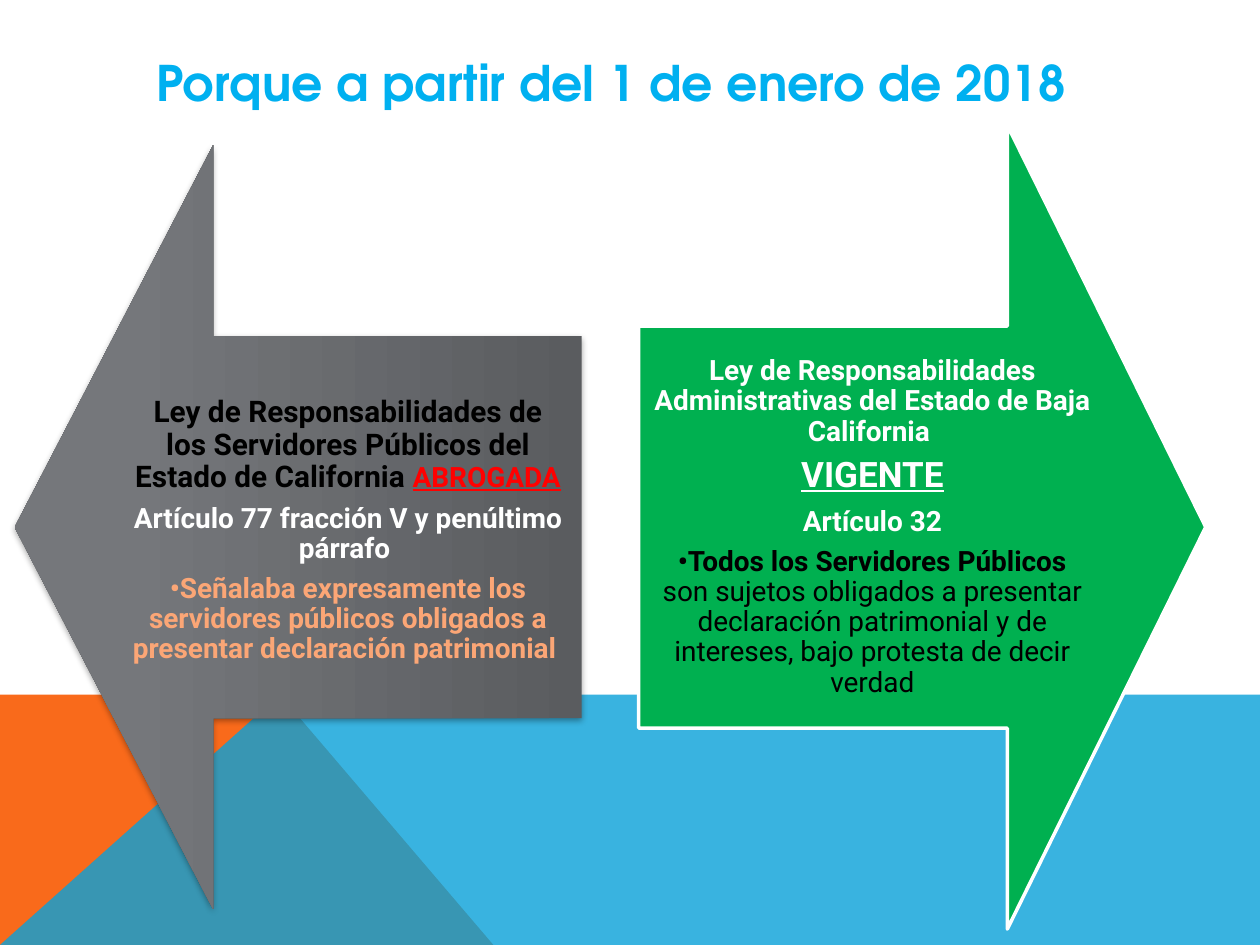
import pptx
import pptx.util
import pptx.dml.color
import pptx.enum.shapes
import pptx.enum.text
import pptx.oxml
import pptx.oxml.ns
import copy

Pt = pptx.util.Pt
qn = pptx.oxml.ns.qn
Align = pptx.enum.text.PP_ALIGN
Anchor = pptx.enum.text.MSO_ANCHOR
WIDE, HIGH = 720, 540


def rgb(code):
    return pptx.dml.color.RGBColor.from_string(code)


def apply(item, values):
    for name, value in values.items():
        setattr(item, name, value)


def add_band(slide, box, points, color, alpha=None):
    """Draw a borderless polygon; points are offsets within the box."""
    left, top = box
    spots = [(left + x, top + y) for x, y in points]
    form = slide.shapes.build_freeform(*spots[0], scale=Pt(1))
    form.add_line_segments(spots[1:], close=True)
    band = form.convert_to_shape()
    band.shadow.inherit = False
    band.line.fill.background()
    band.fill.solid()
    band.fill.fore_color.rgb = rgb(color)
    if alpha:
        tint = band.fill._xPr.find(qn("a:solidFill"))[0]
        tint.append(pptx.oxml.parse_xml(
            f'<a:alpha xmlns:a="{pptx.oxml.ns.nsuri("a")}" val="{alpha * 1000}"/>'))


def add_floor(slide, top):
    deep = HIGH - top
    fold = 160.5
    add_band(slide, (0, top), [(0, deep), (0, 0), (fold, 0), (281.5, deep)], "F96A1B")
    add_band(slide, (0, top), [(0, deep), (fold, 0), (WIDE, 0), (WIDE, deep)],
             "08A1D9", 80)


def add_arrow(slide, box, turn):
    """Fit an up arrow, turned a quarter, into the box it covers on the slide."""
    left, top, width, height = box
    shift = (width - height) / 2
    arrow = slide.shapes.add_shape(
        pptx.enum.shapes.MSO_SHAPE.UP_ARROW,
        Pt(left + shift), Pt(top - shift), Pt(height), Pt(width))
    arrow.rotation = turn
    arrow.adjustments[0] = 0.5
    arrow.adjustments[1] = 0.35
    arrow.shadow.inherit = False
    return arrow


def shade(arrow, stops):
    arrow.line.fill.background()
    arrow.fill.gradient()
    arrow.fill.gradient_angle = 90
    marks = arrow.fill._xPr.find(qn("a:gradFill")).find(qn("a:gsLst"))
    marks.append(copy.deepcopy(marks[-1]))
    for stop, (place, color) in zip(arrow.fill.gradient_stops, stops):
        stop.position = place
        stop.color.rgb = rgb(color)


def drop_shadow(shape):
    effects = shape.element.spPr.find(qn("a:effectLst"))
    effects.append(pptx.oxml.parse_xml(
        f'<a:outerShdw xmlns:a="{pptx.oxml.ns.nsuri("a")}" blurRad="{Pt(3.1)}" '
        f'dist="{Pt(1.8)}" dir="5400000" rotWithShape="0"><a:srgbClr val="000000">'
        '<a:alpha val="35000"/></a:srgbClr></a:outerShdw>'))


def add_text(slide, box, paras, frame, layout, gap=0):
    """Write paragraphs, each a list of (text, color, font values).

    The space after a paragraph is gap times the size of its first run.
    """
    area = slide.shapes.add_textbox(*map(Pt, box)).text_frame
    apply(area, {"word_wrap": True, **frame})
    for index, runs in enumerate(paras):
        para = area.add_paragraph() if index else area.paragraphs[0]
        apply(para, layout)
        for text, color, values in runs:
            run = para.add_run()
            run.text = text
            apply(run.font, {"name": "Roboto", "size": Pt(16), "bold": True, **values})
            run.font.color.rgb = rgb(color)
        para.space_after = Pt(gap * para.runs[0].font.size.pt)


def add_law(slide, box, paras, inset):
    sides = ("left", "top", "right", "bottom")
    frame = {f"margin_{side}": Pt(inset) for side in sides}
    frame["vertical_anchor"] = Anchor.MIDDLE
    layout = {"alignment": Align.CENTER, "line_spacing": 0.9}
    add_text(slide, box, paras, frame, layout, 0.35)


def add_old(slide, box):
    left, top, width, height = box
    arrow = add_arrow(slide, box, 270)
    shade(arrow, [(0, "5A5C5F"), (0.8, "75777B"), (1, "75787C")])
    drop_shadow(arrow)
    add_law(slide, (left + 57, top + 111.5, 267, 218), [
        [("Ley de Responsabilidades de los Servidores Públicos del Estado de California ",
          "000000", {"size": Pt(17)}),
         ("ABROGADA", "FF0000", {"underline": True})],
        [("Artículo 77 fracción V y penúltimo párrafo ", "FFFFFF", {})],
        [("•Señalaba expresamente los servidores públicos obligados a presentar "
          "declaración patrimonial ", "FBA676", {})],
    ], 9.4)


def add_new(slide, box):
    left, top, width, height = box
    arrow = add_arrow(slide, box, 90)
    arrow.fill.solid()
    arrow.fill.fore_color.rgb = rgb("00B050")
    arrow.line.color.rgb = rgb("FFFFFF")
    arrow.line.width = Pt(2)
    add_law(slide, (left, top + 115, 267, 229.7), [
        [("Ley de Responsabilidades Administrativas del Estado de Baja California ",
          "FFFFFF", {})],
        [("VIGENTE", "FFFFFF", {"size": Pt(20), "underline": True})],
        [("Artículo 32", "FFFFFF", {})],
        [("•Todos los Servidores Públicos ", "000000", {}),
         ("son sujetos obligados a presentar declaración patrimonial y de intereses, "
          "bajo protesta de decir verdad", "000000", {"bold": False})],
    ], 8.6)


def add_title(slide, box):
    style = {"name": "TeX Gyre Adventor", "size": Pt(28)}
    add_text(slide, box, [[("Porque a partir del 1 de enero de 2018", "00B0F0", style)]],
             {}, {})


def main():
    deck = pptx.Presentation()
    deck.slide_width, deck.slide_height = Pt(WIDE), Pt(HIGH)
    slide = deck.slides.add_slide(deck.slide_layouts[6])
    add_floor(slide, 397.3)
    add_old(slide, (8.4, 83, 324, 436.5))
    add_new(slide, (365, 71.5, 324, 459.4))
    add_title(slide, (82.4, 26.3, 566.6, 41))
    deck.save("out.pptx")


if __name__ == "__main__":
    main()
